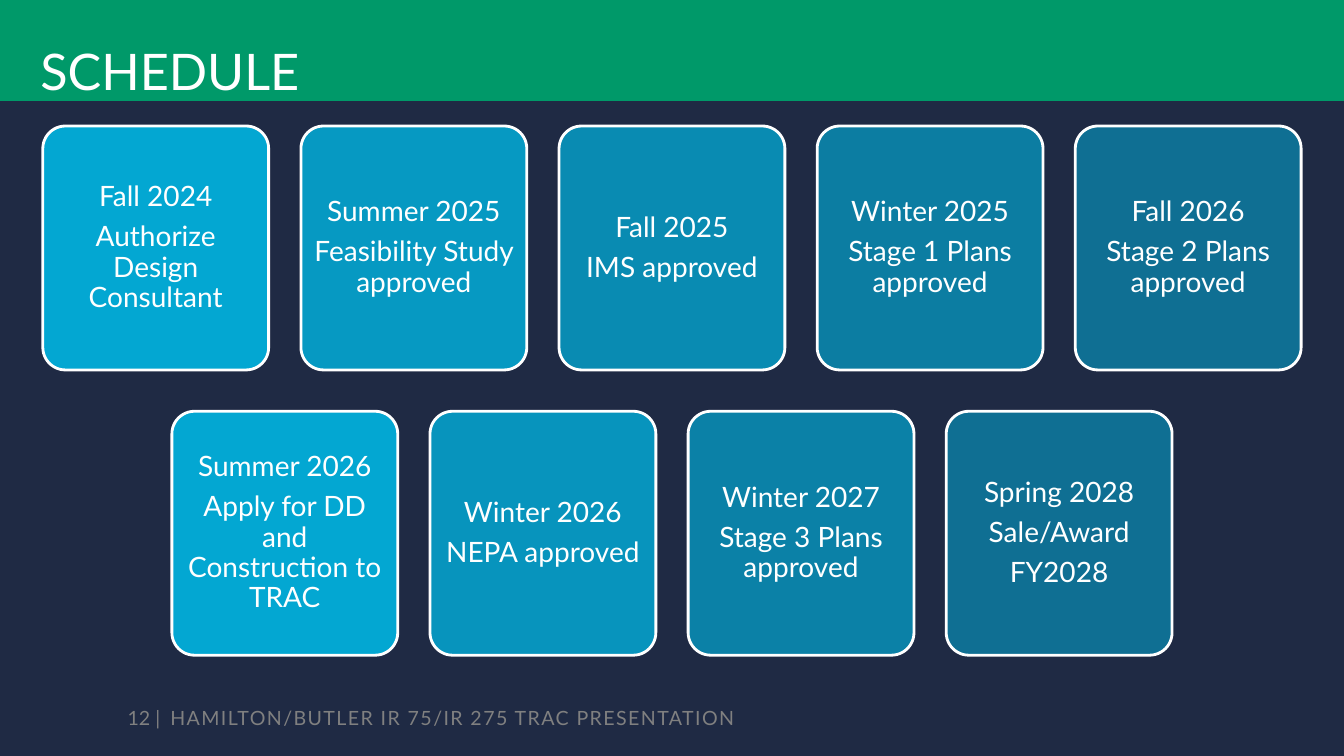
import pptx
import pptx.util
import pptx.dml.color
import pptx.enum.shapes
import pptx.enum.text
import pptx.oxml
import pptx.oxml.ns
from dataclasses import dataclass

Inches = pptx.util.Inches
Pt = pptx.util.Pt
RGB = pptx.dml.color.RGBColor.from_string
Align = pptx.enum.text.PP_ALIGN
Anchor = pptx.enum.text.MSO_ANCHOR


@dataclass(frozen=True)
class Theme:
    font: str = "Lato"
    navy: str = "1F2A44"
    green: str = "009969"
    cyan: str = "00B5E2"
    white: str = "FFFFFF"
    gray: str = "808080"
    title_size: int = 36
    card_size: int = 20
    footer_size: int = 14


theme = Theme()
SLIDE_W, SLIDE_H = 13.33, 7.5
CARD_W, CARD_H, CARD_GAP = 2.24, 2.42, 0.32
OPACITY_FIRST, OPACITY_LAST = 90, 50

DESIGN_STEPS = [
    ["Fall 2024", "Authorize Design Consultant"],
    ["Summer 2025", "Feasibility Study approved"],
    ["Fall 2025", "IMS approved"],
    ["Winter 2025", "Stage 1 Plans approved"],
    ["Fall 2026", "Stage 2 Plans approved"],
]
DELIVERY_STEPS = [
    ["Summer 2026", "Apply for DD and Construction to TRAC"],
    ["Winter 2026", "NEPA approved"],
    ["Winter 2027", "Stage 3 Plans approved"],
    ["Spring 2028", "Sale/Award", "FY2028"],
]


def apply(obj, formats):
    for name, value in formats.items():
        setattr(obj, name, value)


def write(sp, lines, size, color, insets, anchor, align, wrap=True, **spacing):
    tf = sp.text_frame
    sides = ("margin_left", "margin_top", "margin_right", "margin_bottom")
    apply(tf, {side: Inches(inset) for side, inset in zip(sides, insets)})
    apply(tf, {"word_wrap": wrap, "vertical_anchor": anchor,
               "auto_size": pptx.enum.text.MSO_AUTO_SIZE.NONE})
    for i, line in enumerate(lines):
        p = tf.paragraphs[0] if i == 0 else tf.add_paragraph()
        p.alignment = align
        apply(p, spacing if i else {**spacing, "space_before": Pt(0)})
        r = p.add_run()
        r.text = line
        apply(r.font, {"name": theme.font, "size": Pt(size)})
        r.font.color.rgb = RGB(color)


def set_opacity(sp, percent):
    color = sp.fill._xPr.find(".//" + pptx.oxml.ns.qn("a:srgbClr"))
    alpha = pptx.oxml.parse_xml(
        f'<a:alpha {pptx.oxml.ns.nsdecls("a")} val="{round(percent * 1000)}"/>')
    color.append(alpha)


def add_title(s, text, left, top, width, height):
    sp = s.shapes.title
    apply(sp, {"left": Inches(left), "top": Inches(top),
               "width": Inches(width), "height": Inches(height)})
    sp.fill.solid()
    sp.fill.fore_color.rgb = RGB(theme.green)
    write(sp, [text], theme.title_size, theme.white, (0.4, 0.1, 0.4, 0),
          Anchor.BOTTOM, Align.LEFT)


def add_card(s, lines, opacity, left, top, width, height):
    sp = s.shapes.add_shape(pptx.enum.shapes.MSO_SHAPE.ROUNDED_RECTANGLE,
                            Inches(left), Inches(top), Inches(width), Inches(height))
    sp.adjustments[0] = 0.1
    sp.shadow.inherit = False
    sp.fill.solid()
    sp.fill.fore_color.rgb = RGB(theme.cyan)
    set_opacity(sp, opacity)
    sp.line.color.rgb = RGB(theme.white)
    sp.line.width = Pt(2)
    write(sp, lines, theme.card_size, theme.white, (0.03,) * 4,
          Anchor.MIDDLE, Align.CENTER, line_spacing=0.9, space_before=Pt(7))


def add_card_row(s, steps, left, top, width, height):
    pitch = CARD_W + CARD_GAP
    start = left + (width - len(steps) * pitch + CARD_GAP) / 2
    fade = (OPACITY_FIRST - OPACITY_LAST) / (len(steps) - 1)
    for i, lines in enumerate(steps):
        add_card(s, lines, OPACITY_FIRST - i * fade,
                 start + i * pitch, top, CARD_W, height)


def add_footer(s, number, text, left, top, width, height):
    number_w = 0.52
    num = s.shapes.add_textbox(Inches(left), Inches(top),
                               Inches(number_w), Inches(height))
    write(num, [number], theme.footer_size, theme.gray, (0,) * 4,
          Anchor.MIDDLE, Align.RIGHT, wrap=False)
    label = s.shapes.add_textbox(Inches(left + number_w), Inches(top),
                                 Inches(width - number_w), Inches(height))
    write(label, [text], theme.footer_size, theme.gray, (0.1, 0.05, 0.1, 0.05),
          Anchor.MIDDLE, Align.LEFT)
    label.text_frame.paragraphs[0].runs[0].font._element.set("spc", "100")


def build_schedule(prs):
    s = prs.slides.add_slide(prs.slide_layouts[5])
    s.background.fill.solid()
    s.background.fill.fore_color.rgb = RGB(theme.navy)
    add_title(s, "SCHEDULE", 0, 0, SLIDE_W, 1)
    add_card_row(s, DESIGN_STEPS, 0, 1.25, SLIDE_W, CARD_H)
    add_card_row(s, DELIVERY_STEPS, 0, 4.08, SLIDE_W, CARD_H)
    add_footer(s, "12 |", "HAMILTON/BUTLER IR 75/IR 275 TRAC PRESENTATION",
               1.07, 6.92, 9, 0.4)


def main():
    prs = pptx.Presentation()
    apply(prs, {"slide_width": Inches(SLIDE_W), "slide_height": Inches(SLIDE_H)})
    build_schedule(prs)
    prs.save("out.pptx")


if __name__ == "__main__":
    main()
